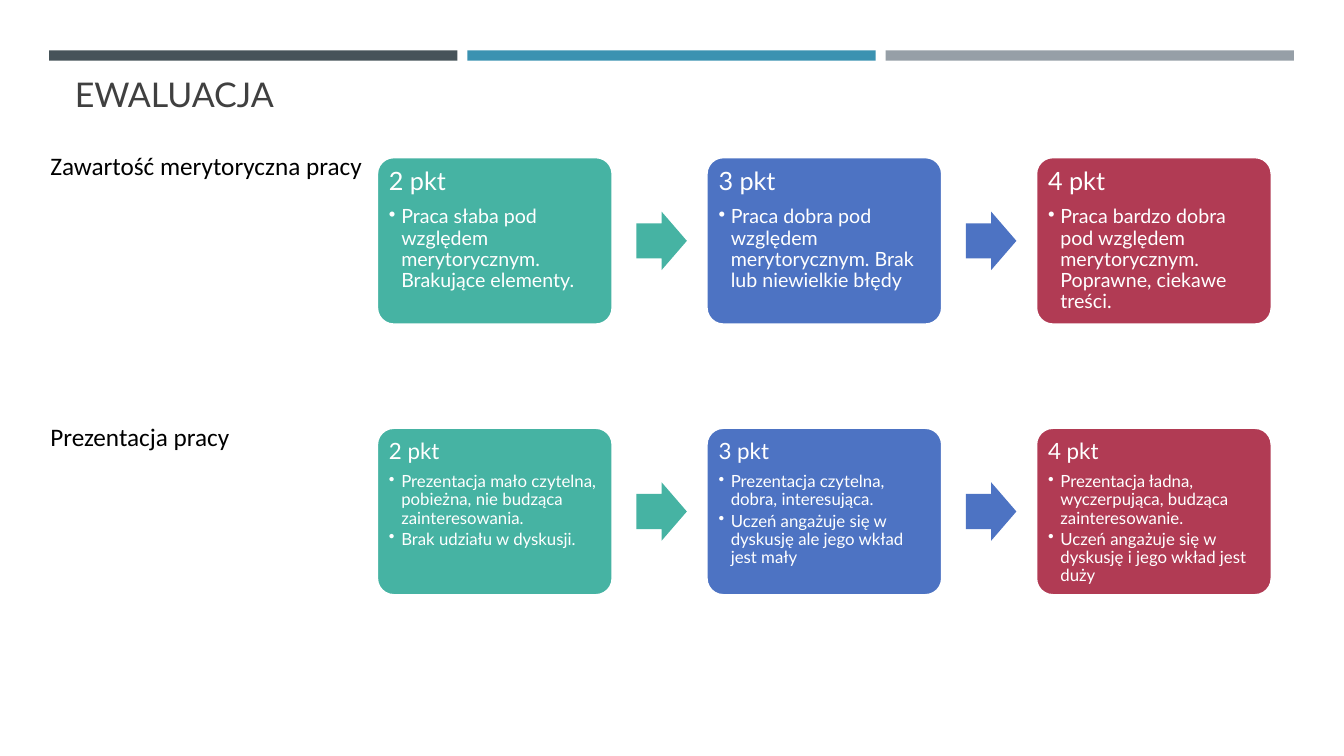
import pptx
import pptx.util
import pptx.dml.color
import pptx.enum.shapes
import pptx.enum.text
import pptx.oxml.ns
from dataclasses import dataclass
from lxml import etree

Cm = pptx.util.Cm
Pt = pptx.util.Pt
KIND = pptx.enum.shapes.MSO_SHAPE
ANCHOR = pptx.enum.text.MSO_ANCHOR
ALIGN = pptx.enum.text.PP_ALIGN


@dataclass(frozen=True)
class Theme:
    bars: tuple = ("465359", "3B92B1", "969FA7")
    cards: tuple = ("46B3A3", "4D73C3", "B13B54")
    white: str = "FFFFFF"
    black: str = "000000"
    grey: str = "404040"
    font: str = "Lato"
    plain: str = "Calibri"
    title: float = 24.3
    label: float = 18


THEME = Theme()

# label, heading size, bullet size, cards as (heading, bullets)
ROWS = [
    ("Zawartość merytoryczna pracy", 18, 14, [
        ("2 pkt", ["Praca słaba pod względem merytorycznym. Brakujące elementy."]),
        ("3 pkt", ["Praca dobra pod względem merytorycznym. Brak lub niewielkie błędy"]),
        ("4 pkt", ["Praca bardzo dobra pod względem merytorycznym. "
                   "Poprawne, ciekawe treści."]),
    ]),
    ("Prezentacja pracy", 16, 12, [
        ("2 pkt", ["Prezentacja mało czytelna, pobieżna, nie budząca zainteresowania.",
                   "Brak udziału w dyskusji."]),
        ("3 pkt", ["Prezentacja czytelna, dobra, interesująca.",
                   "Uczeń angażuje się w dyskusję ale jego wkład jest mały"]),
        ("4 pkt", ["Prezentacja ładna, wyczerpująca, budząca zainteresowanie.",
                   "Uczeń angażuje się w dyskusję i jego wkład jest duży"]),
    ]),
]


def rgb(code):
    return pptx.dml.color.RGBColor.from_string(code)


def write(para, text, size, color, font=THEME.font, line=None, after=0, bullet=False):
    """Fill a paragraph; after is a share of its line height."""
    para.alignment = ALIGN.LEFT
    para.line_spacing = line
    para.space_before = Pt(0)
    para.space_after = Pt(round(after * size * 1.2, 1))
    if bullet:
        props = para._p.get_or_add_pPr()
        props.set("marL", str(Cm(0.31)))
        props.set("indent", str(-Cm(0.31)))
        mark = etree.SubElement(props, pptx.oxml.ns.qn("a:buChar"))
        mark.set("char", "•")
    run = para.add_run()
    run.text = text
    run.font.size = Pt(size)
    run.font.name = font
    run.font.color.rgb = rgb(color)


def shape(slide, kind, left, top, width, height, fill):
    item = slide.shapes.add_shape(kind, Cm(left), Cm(top), Cm(width), Cm(height))
    item.shadow.inherit = False
    item.fill.solid()
    item.fill.fore_color.rgb = rgb(fill)
    item.line.fill.background()
    return item


def header(slide, left, top, width):
    gap = 0.25
    wide = (width - 2 * gap) / 3
    for i, color in enumerate(THEME.bars):
        shape(slide, KIND.RECTANGLE, left + i * (wide + gap), top, wide, 0.26, color)
    title = slide.shapes.title
    title.left, title.top = Cm(left + 0.39), Cm(top + 0.69)
    title.width, title.height = Cm(width - 1), Cm(1.07)
    frame = title.text_frame
    frame.auto_size = pptx.enum.text.MSO_AUTO_SIZE.NONE
    frame.vertical_anchor = ANCHOR.BOTTOM
    write(frame.paragraphs[0], "EWALUACJA", THEME.title, THEME.grey, line=0.9)


def label(slide, text, left, top):
    box = slide.shapes.add_textbox(Cm(left), Cm(top), Cm(16.94), Cm(1.02))
    box.text_frame.word_wrap = True
    write(box.text_frame.paragraphs[0], text, THEME.label, THEME.black, font=THEME.plain)


def card(slide, left, top, width, height, fill, head, points, big, small):
    box = shape(slide, KIND.ROUNDED_RECTANGLE, left, top, width, height, fill)
    box.adjustments[0] = 0.1
    box.line.color.rgb = rgb(THEME.white)
    box.line.width = Pt(1.75)
    frame = box.text_frame
    frame.word_wrap = True
    frame.vertical_anchor = ANCHOR.TOP
    frame.margin_left = frame.margin_right = Cm(0.18)
    frame.margin_top = frame.margin_bottom = Cm(0.18)
    write(frame.paragraphs[0], head, big, THEME.white, line=0.9, after=0.35)
    for point in points:
        write(frame.add_paragraph(), point, small, THEME.white,
              line=0.9, after=0.15, bullet=True)


def flow(slide, left, top, width, height, cards, big, small):
    """Spread cards over the box, with an arrow in each gap."""
    wide = 5.94
    pitch = (width - wide) / (len(cards) - 1)
    for i, (head, points) in enumerate(cards):
        x, color = left + i * pitch, THEME.cards[i]
        card(slide, x, top, wide, height, color, head, points, big, small)
        if i < len(cards) - 1:
            arrow = shape(slide, KIND.RIGHT_ARROW, x + wide + 0.6,
                          top + (height - 1.47) / 2, 1.27, 1.47, color)
            arrow.adjustments[0] = 0.6
            arrow.adjustments[1] = 0.5


def main():
    deck = pptx.Presentation()
    deck.slide_width, deck.slide_height = Cm(33.87), Cm(19.05)
    slide = deck.slides.add_slide(deck.slide_layouts[5])
    header(slide, 1.24, 1.27, 31.37)
    for i, (text, big, small, cards) in enumerate(ROWS):
        top = 3.96 + i * 6.82
        label(slide, text, 1.02, top - 0.3)
        flow(slide, 9.5, top, 22.55, 4.22, cards, big, small)
    deck.save("out.pptx")


if __name__ == "__main__":
    main()
